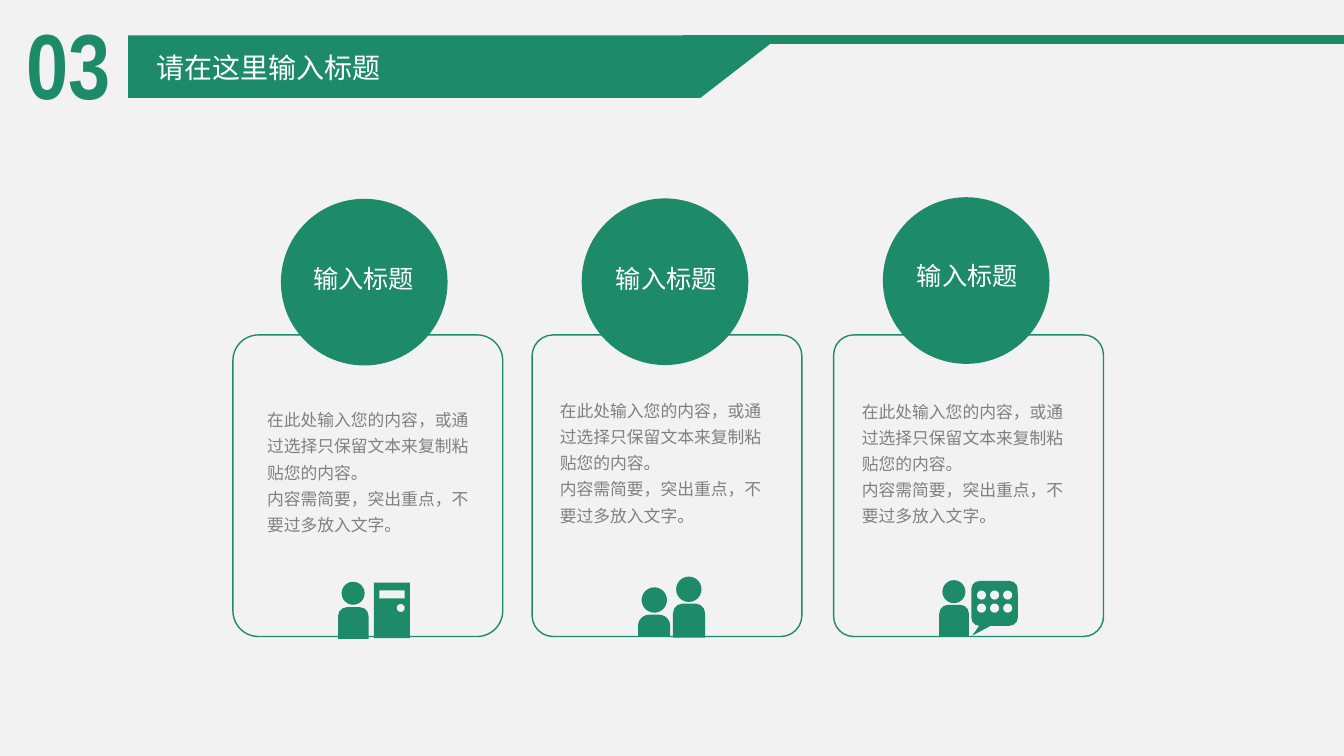
from lxml import etree
from pptx import Presentation
from pptx.dml.color import RGBColor
from pptx.enum.shapes import MSO_CONNECTOR, MSO_SHAPE
from pptx.enum.text import MSO_ANCHOR
from pptx.oxml.ns import qn
from pptx.util import Cm, Pt

RECTANGLE = MSO_SHAPE.RECTANGLE
OVAL = MSO_SHAPE.OVAL
CARD = MSO_SHAPE.ROUNDED_RECTANGLE
SHOULDERS = MSO_SHAPE.ROUND_2_SAME_RECTANGLE
BUBBLE = MSO_SHAPE.ROUNDED_RECTANGULAR_CALLOUT
STRAIGHT = MSO_CONNECTOR.STRAIGHT
TOP = MSO_ANCHOR.TOP

GREEN, PAPER, GRAY, WHITE = "1D8B69", "F2F2F2", "808080", "FFFFFF"
CJK_FONT, NUMBER_FONT = "Noto Sans CJK SC", "Arial Narrow"

SLIDE_WIDTH, SLIDE_HEIGHT = 33.87, 19.05
NUMBER = "03"
HEADING = "请在这里输入标题"
CARD_TITLE = "输入标题"
CARD_BODY = [
    "在此处输入您的内容，或通过选择只保留文本来复制粘贴您的内容。",
    "内容需简要，突出重点，不要过多放入文字。",
]
BANNER = [(3.23, 0.89), (19.69, 0.89), (17.65, 2.47), (3.23, 2.47)]
CARD_TOP, CARD_WIDTH, CARD_HEIGHT, CIRCLE = 8.44, 6.8, 7.6, 4.2
CARDS = [
    {"left": 5.87, "corner": 0.095, "circle": (7.08, 5.01), "title": (7.64, 6.51), "body": (6.73, 10.18)},
    {"left": 13.41, "corner": 0.078, "circle": (14.66, 5), "title": (15.27, 6.51), "body": (14.11, 9.94)},
    {"left": 21.01, "corner": 0.074, "circle": (22.25, 4.97), "title": (22.86, 6.43), "body": (21.72, 9.96)},
]
PEOPLE = [
    {"head": (8.61, 14.66, 0.58), "body": (8.52, 15.3, 0.77, 0.8), "corner": 0.29},
    {"head": (16.17, 14.8, 0.64), "body": (16.08, 15.49, 0.81, 0.56), "corner": 0.5},
    {"head": (17.04, 14.53, 0.64), "body": (16.96, 15.21, 0.81, 0.86), "corner": 0.3},
    {"head": (23.75, 14.62, 0.58), "body": (23.67, 15.24, 0.75, 0.79), "corner": 0.3},
]
DOOR, DOOR_SLOT, DOOR_KNOB = (9.42, 14.68, 0.91, 1.4), (9.56, 14.88, 0.64, 0.2), (10, 15.22, 0.2, 0.2)
SPEECH, SPEECH_SHAPE = (24.48, 14.64, 1.17, 1.13), (-0.48, 0.72, 0.18)
DOT_LEFT, DOT_TOP, DOT_STEP, DOT = 24.62, 14.88, 0.33, 0.23

presentation = Presentation()
presentation.slide_width, presentation.slide_height = Cm(SLIDE_WIDTH), Cm(SLIDE_HEIGHT)
slide = presentation.slides.add_slide(presentation.slide_layouts[6])


def paint(fill, color):
    fill.solid()
    fill.fore_color.rgb = RGBColor.from_string(color)


def add_shape(kind, box, fill=GREEN, adjustments=()):
    shape = slide.shapes.add_shape(kind, *map(Cm, box))
    shape.shadow.inherit = False
    for index, value in enumerate(adjustments):
        shape.adjustments[index] = value
    if fill:
        paint(shape.fill, fill)
        shape.line.fill.background()
    else:
        shape.fill.background()
        paint(shape.line.fill, GREEN)
        shape.line.width = Pt(1)


def add_text(lines, box, size, color, font=CJK_FONT, bold=False, wrap=True, inset=True, spacing=1.0):
    frame = slide.shapes.add_textbox(*map(Cm, box)).text_frame
    frame.word_wrap = wrap
    frame.vertical_anchor = TOP
    if not inset:
        frame.margin_left = frame.margin_top = frame.margin_right = frame.margin_bottom = 0
    frame.text = "\n".join(lines)
    for paragraph in frame.paragraphs:
        paragraph.line_spacing = spacing
        paragraph.font.size = Pt(size)
        paragraph.font.bold = bold
        paragraph.font.name = font
        paint(paragraph.font.fill, color)
        properties = paragraph._p.pPr.find(qn("a:defRPr"))
        etree.SubElement(properties, qn("a:ea")).set("typeface", font)


def add_header():
    rule = slide.shapes.add_connector(STRAIGHT, Cm(17.22), Cm(1), Cm(SLIDE_WIDTH), Cm(1))
    paint(rule.line.fill, GREEN)
    rule.line.width = Pt(6)
    etree.SubElement(rule._element.spPr, qn("a:effectLst"))
    start, *corners = [(Cm(x), Cm(y)) for x, y in BANNER]
    builder = slide.shapes.build_freeform(*start)
    builder.add_line_segments(corners)
    banner = builder.convert_to_shape()
    banner.shadow.inherit = False
    paint(banner.fill, GREEN)
    banner.line.fill.background()
    add_text([NUMBER], (0.42, 0.05, 4.04, 3.07), 66, GREEN, NUMBER_FONT, bold=True)
    add_text([HEADING], (3.7, 1.14, 8.48, 1.12), 20, WHITE)


def add_card(card):
    add_shape(OVAL, (*card["circle"], CIRCLE, CIRCLE))
    add_shape(CARD, (card["left"], CARD_TOP, CARD_WIDTH, CARD_HEIGHT), None, [card["corner"]])
    add_text([CARD_TITLE], (*card["title"], 3.07, 1.02), 18, WHITE, wrap=False)
    add_text(CARD_BODY, (*card["body"], 5.41, 3.33), 12, GRAY, inset=False, spacing=1.3)


def add_icons():
    for person in PEOPLE:
        left, top, diameter = person["head"]
        add_shape(OVAL, (left, top, diameter, diameter))
        add_shape(SHOULDERS, person["body"], adjustments=[person["corner"], 0])
    add_shape(RECTANGLE, DOOR)
    add_shape(RECTANGLE, DOOR_SLOT, PAPER)
    add_shape(OVAL, DOOR_KNOB, PAPER)
    add_shape(BUBBLE, SPEECH, adjustments=SPEECH_SHAPE)
    for row in range(2):
        for column in range(3):
            add_shape(OVAL, (DOT_LEFT + column * DOT_STEP, DOT_TOP + row * DOT_STEP, DOT, DOT), PAPER)


add_shape(RECTANGLE, (0, 0, SLIDE_WIDTH, SLIDE_HEIGHT), PAPER)
add_header()
for card in CARDS:
    add_card(card)
add_icons()
presentation.save("out.pptx")
